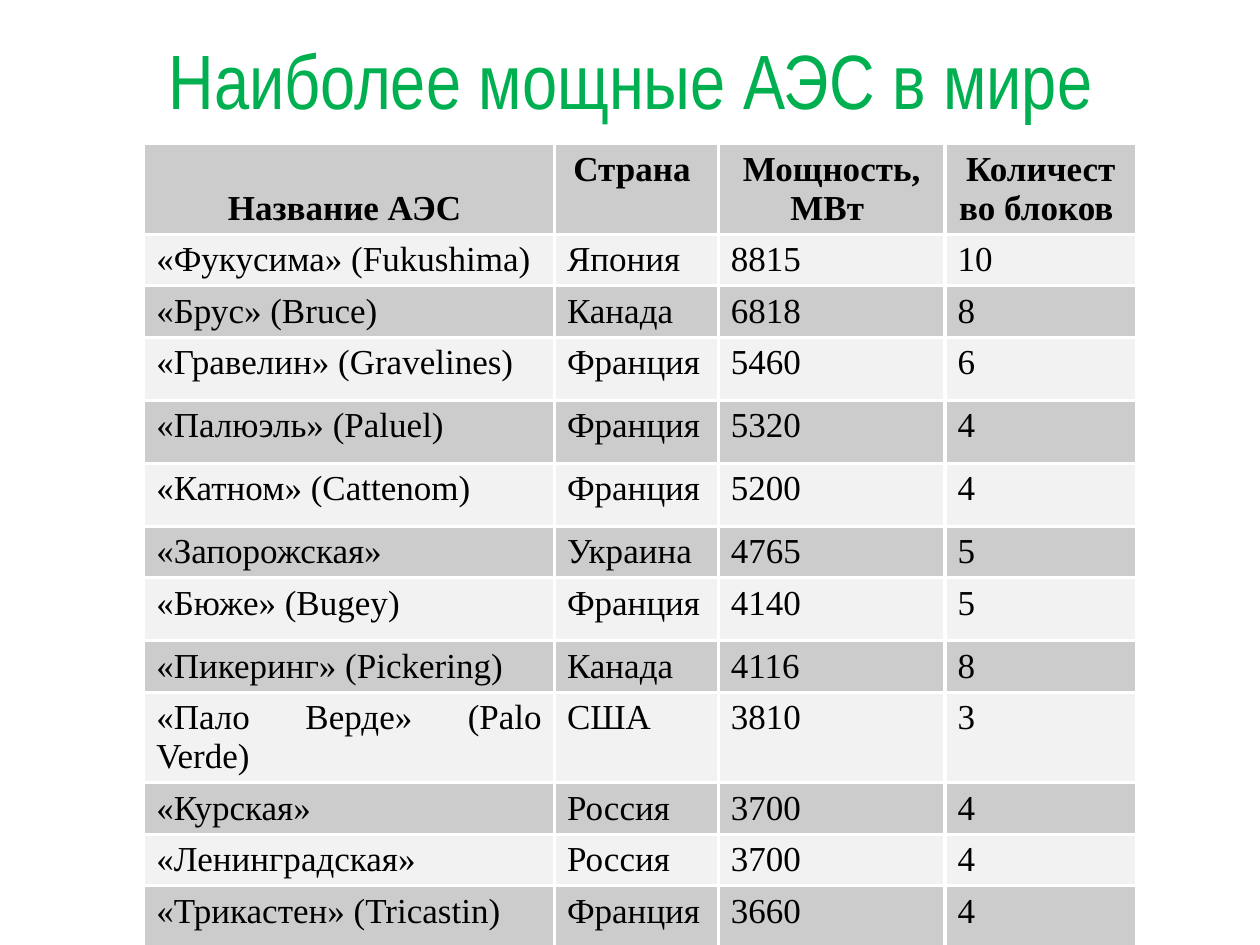
import dataclasses

import pptx
import pptx.dml.color
import pptx.enum.text
import pptx.oxml
import pptx.oxml.ns
import pptx.util

RGBColor = pptx.dml.color.RGBColor
ALIGN = pptx.enum.text.PP_ALIGN
ANCHOR = pptx.enum.text.MSO_ANCHOR

GREEN = RGBColor(0x00, 0xB0, 0x50)
BLACK = RGBColor(0x00, 0x00, 0x00)
WHITE = RGBColor(0xFF, 0xFF, 0xFF)
GREY = RGBColor(0xCC, 0xCC, 0xCC)
PALE = RGBColor(0xF2, 0xF2, 0xF2)

WIDTH, HEIGHT = pptx.util.Inches(10), pptx.util.Inches(7.5)
COLUMNS = (3.26, 1.3, 1.8, 1.52)
HEADER_ROW, LOW_ROW, TALL_ROW = 0.72, 0.33, 0.5
BORDER = pptx.util.Pt(2)

TITLE_FONT = {"name": "Arial Narrow", "size": pptx.util.Pt(44), "bold": False}
BODY_FONT = {"name": "Times New Roman", "size": pptx.util.Pt(20), "bold": False}
HEADER_FONT = {**BODY_FONT, "bold": True}

# The trailing spaces shift the centred lines slightly to the left.
HEADERS = ("Название АЭС ", "Страна ", "Мощность, МВт ", "Количество блоков ")


@dataclasses.dataclass(frozen=True)
class Plant:
    name: str
    country: str
    megawatts: int
    units: int
    height: float = LOW_ROW

    def texts(self) -> tuple[str, ...]:
        return self.name, self.country, str(self.megawatts), str(self.units)


PLANTS = (
    Plant("«Фукусима» (Fukushima)", "Япония", 8815, 10),
    Plant("«Брус» (Bruce)", "Канада", 6818, 8),
    Plant("«Гравелин» (Gravelines)", "Франция", 5460, 6, TALL_ROW),
    Plant("«Палюэль» (Paluel)", "Франция", 5320, 4, TALL_ROW),
    Plant("«Катном» (Cattenom)", "Франция", 5200, 4, TALL_ROW),
    Plant("«Запорожская»", "Украина", 4765, 5),
    Plant("«Бюже» (Bugey)", "Франция", 4140, 5, TALL_ROW),
    Plant("«Пикеринг» (Pickering)", "Канада", 4116, 8),
    Plant("«Пало Верде» (Palo Verde)", "США", 3810, 3, TALL_ROW),
    Plant("«Курская»", "Россия", 3700, 4),
    Plant("«Ленинградская»", "Россия", 3700, 4),
    Plant("«Трикастен» (Tricastin)", "Франция", 3660, 4, TALL_ROW),
)


def write(tf, text: str, font: dict, color: RGBColor, align: ALIGN) -> None:
    p = tf.paragraphs[0]
    p.alignment = align
    r = p.add_run()
    r.text = text
    for key, value in font.items():
        setattr(r.font, key, value)
    r.font.color.rgb = color


def add_borders(cell) -> None:
    """Border lines must precede the fill in the cell's properties."""
    props = cell._tc.get_or_add_tcPr()
    for side in "LRTB":
        props.append(pptx.oxml.parse_xml(
            f'<a:ln{side} {pptx.oxml.ns.nsdecls("a")} w="{BORDER}">'
            f'<a:solidFill><a:srgbClr val="{WHITE}"/></a:solidFill></a:ln{side}>'))


def fill_row(row, texts: tuple[str, ...], font: dict, align: ALIGN, fill: RGBColor) -> None:
    for cell, text in zip(row.cells, texts):
        add_borders(cell)
        cell.fill.solid()
        cell.fill.fore_color.rgb = fill
        write(cell.text_frame, text, font, BLACK, align)


def add_title(s, text: str) -> None:
    sp = s.shapes.title
    box = {"left": 0.051 * WIDTH, "top": 0, "width": 0.9 * WIDTH, "height": HEIGHT / 6}
    for key, value in box.items():
        setattr(sp, key, int(value))
    sp.text_frame.vertical_anchor = ANCHOR.MIDDLE
    write(sp.text_frame, text, TITLE_FONT, GREEN, ALIGN.CENTER)


def add_plant_table(s) -> None:
    heights = (HEADER_ROW, *(plant.height for plant in PLANTS))
    table = s.shapes.add_table(
        len(heights), len(COLUMNS), int(0.114 * WIDTH), int(0.152 * HEIGHT),
        pptx.util.Inches(sum(COLUMNS)), pptx.util.Inches(sum(heights))).table
    for column, width in zip(table.columns, COLUMNS):
        column.width = pptx.util.Inches(width)
    for row, height in zip(table.rows, heights):
        row.height = pptx.util.Inches(height)
    fill_row(table.rows[0], HEADERS, HEADER_FONT, ALIGN.CENTER, GREY)
    table.cell(0, 0).vertical_anchor = ANCHOR.BOTTOM
    for i, plant in enumerate(PLANTS, start=1):
        fill = PALE if i % 2 else GREY
        fill_row(table.rows[i], plant.texts(), BODY_FONT, ALIGN.JUSTIFY, fill)


def main() -> None:
    prs = pptx.Presentation()
    prs.slide_width, prs.slide_height = WIDTH, HEIGHT
    s = prs.slides.add_slide(prs.slide_layouts.get_by_name("Title Only"))
    add_title(s, "Наиболее мощные АЭС в мире")
    add_plant_table(s)
    prs.save("out.pptx")


if __name__ == "__main__":
    main()
